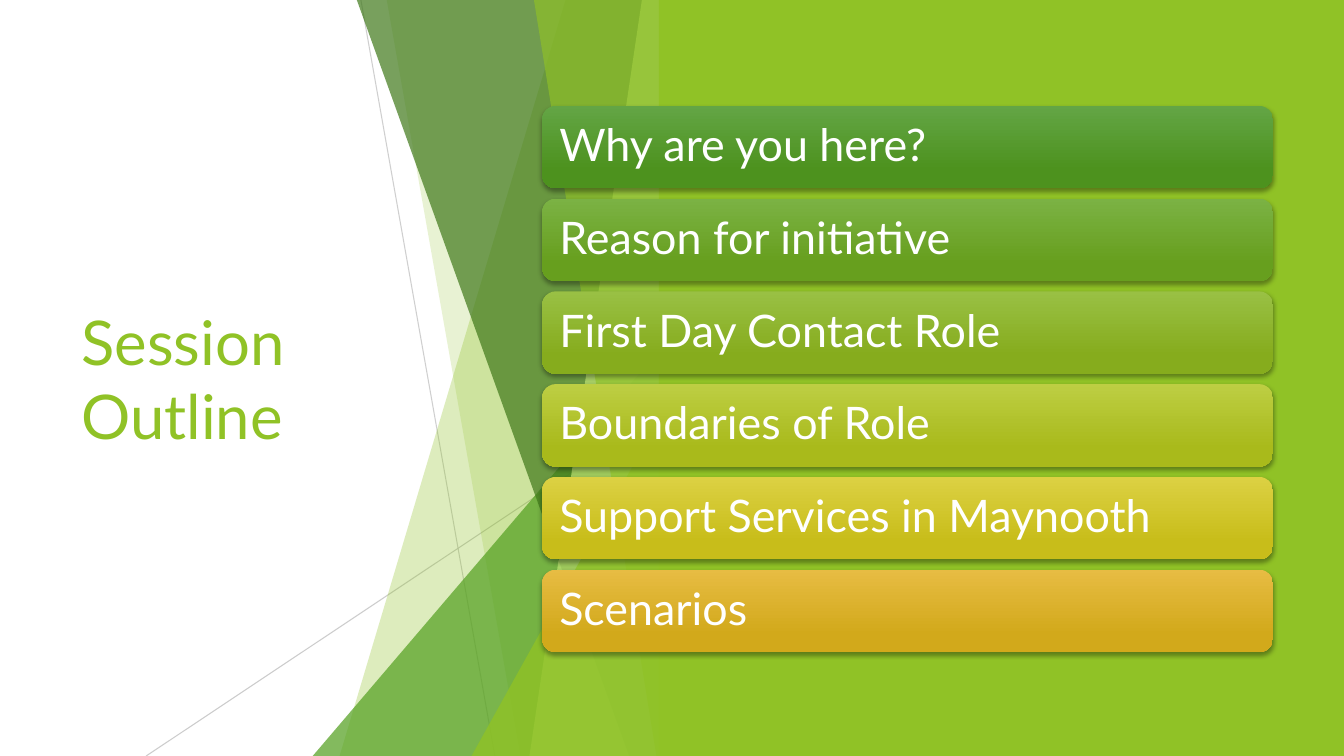
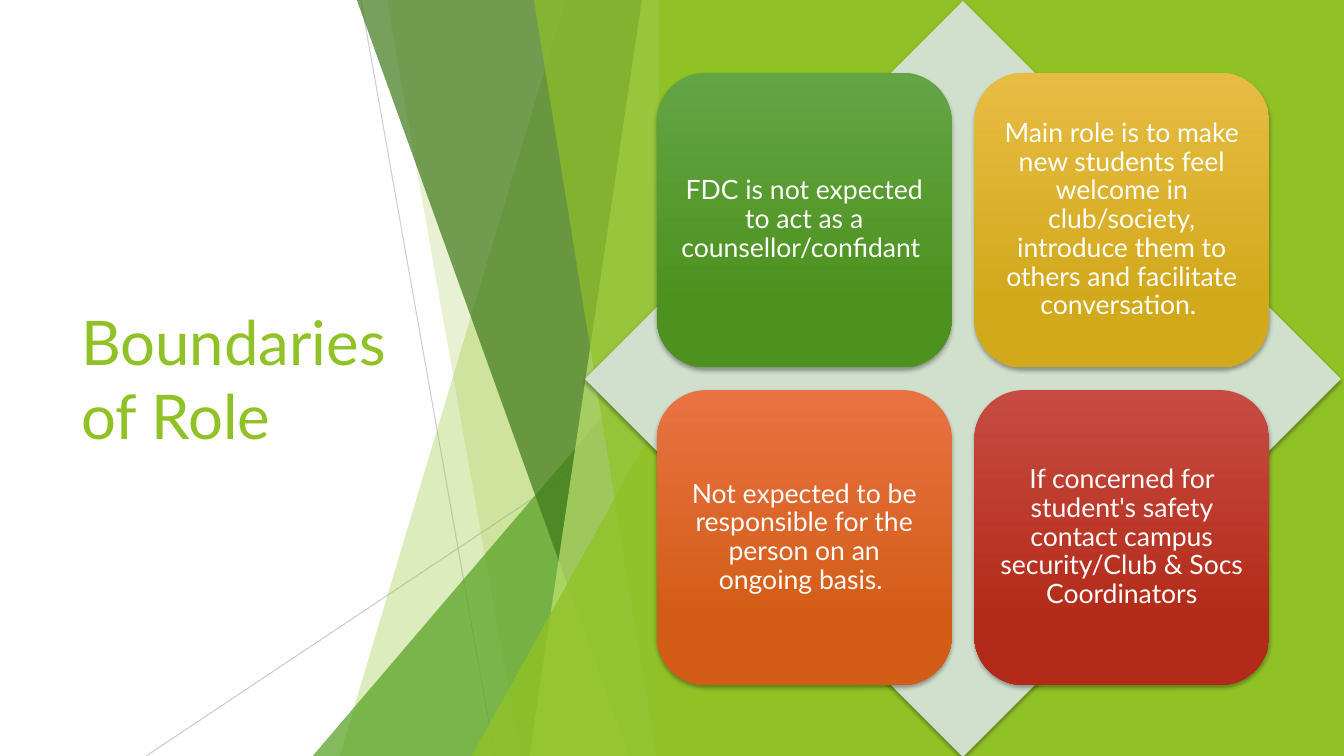
from pptx import Presentation
from pptx.dml.color import RGBColor
from pptx.enum import shapes, text
from pptx.oxml import parse_xml
from pptx.oxml import ns
from pptx.util import Pt

LIME, WHITE, GREY = "90C226", "FFFFFF", "BFBFBF"
KIND = shapes.MSO_SHAPE
SHADOW = (f'<a:outerShdw {ns.nsdecls("a")} blurRad="38100" dist="25400" dir="5400000" rotWithShape="0">'
          '<a:srgbClr val="000000"><a:alpha val="35000"/></a:srgbClr></a:outerShdw>')


def paint(fill, *cols, alpha=100):
    """One colour gives a solid fill, two give a gradient from top to bottom."""
    if len(cols) == 2:
        fill.gradient()
        fill.gradient_angle = 270
        for stop, col, pos in zip(fill.gradient_stops, cols, (0, 0.78)):
            stop.color.rgb = RGBColor.from_string(col)
            stop.position = pos
        return
    fill.solid()
    fill.fore_color.rgb = RGBColor.from_string(cols[0])
    if alpha < 100:
        node = fill._xPr.find(".//" + ns.qn("a:srgbClr"))
        node.append(parse_xml(f'<a:alpha {ns.nsdecls("a")} val="{alpha * 1000}"/>'))


def write(shape, words, size=19, col=WHITE, align="LEFT", pad=7.2, lead=1.0):
    frame = shape.text_frame
    frame.word_wrap = True
    frame.vertical_anchor = text.MSO_ANCHOR.MIDDLE
    frame.margin_left = frame.margin_right = Pt(pad)
    frame.margin_top = frame.margin_bottom = Pt(min(pad, 9))
    para = frame.paragraphs[0]
    para.alignment = getattr(text.PP_ALIGN, align)
    para.line_spacing = lead
    run = para.add_run()
    run.text = words
    run.font.name, run.font.size = "Lato", Pt(size)
    paint(run.font.fill, col)


# Backdrop: thin lines (x1, y1, x2, y2, alpha)
LINES = [(257.8, 0, 353.5, 540, 75), (479.5, 290.2, 104.4, 540, 80)]
# Facets end at EDGE: (top x, foot x, top y, colour, alpha); a top y marks a triangle
EDGE = 479.7
FACETS = [
    (404, 242.6, 0, LIME, 30),
    (276.3, 371.7, 0, LIME, 20),
    (EDGE, 223.4, 239.8, "54A021", 72),
    (254.9, 449.4, 0, "3F7819", 70),
    (458.5, 378.2, 0, "C0E474", 70),
    (381.4, 468.9, 0, LIME, 65),
    (EDGE, 336.8, 283, LIME, 80),
]

GREEN, GOLD = ("63A545", "4D921E"), ("E7BC43", "D2A91B")

# Outline bars: one column
topics = [
    ("Why are you here?", GREEN),
    ("Reason for initiative", ("7BB244", "679F1E")),
    ("First Day Contact Role", ("99C044", "86AC1D")),
    ("Boundaries of Role", ("BDCE43", "A9BA1B")),
    ("Support Services in Maynooth", ("DCD143", "C8BD1A")),
    ("Scenarios", GOLD),
]
bars = [(KIND.ROUNDED_RECTANGLE, 387.2, 75.6 + 66.25 * i, 522, 59, cols, words)
        for i, (words, cols) in enumerate(topics)]

# Boundary cards: two by two over a diamond
limits = [
    ("FDC is not expected to act as a counsellor/confidant ", GREEN),
    ("Main role is to make new students feel welcome in club/society, "
     "introduce them to others and facilitate conversation. ", GOLD),
    ("Not expected to be responsible for the person on an ongoing basis. ",
     ("E87242", "D35D16")),
    ("If concerned for student's safety contact campus security/Club & Socs Coordinators",
     ("C74B42", "B32B18")),
]
cards = [(KIND.DIAMOND, 417.8, 0.7, 540, 540, ("D1DFCD",), "")]
cards += [(KIND.ROUNDED_RECTANGLE, 469.2 + 226.8 * (i % 2), 51.9 + 226.8 * (i // 2),
           210.6, 210.6, cols, words) for i, (words, cols) in enumerate(limits)]

PAGES = [
    ("Session Outline", bars, dict(size=32, pad=9.4, lead=0.9)),
    ("Boundaries of Role", cards, dict(size=19, pad=5.8, lead=0.9, align="CENTER")),
]

deck = Presentation()
deck.slide_width, deck.slide_height = Pt(960), Pt(540)

for title, items, style in PAGES:
    slide = deck.slides.add_slide(deck.slide_layouts[6])
    paint(slide.background.fill, WHITE)
    pool = slide.shapes

    # Title
    box = pool.add_textbox(Pt(51), Pt(108.7), Pt(279.4), Pt(322.6))
    write(box, title, size=44, col=LIME)

    # Thin lines
    for x1, y1, x2, y2, alpha in LINES:
        line = pool.add_connector(shapes.MSO_CONNECTOR.STRAIGHT, Pt(x1), Pt(y1), Pt(x2), Pt(y2))
        line.line.width = Pt(0.75)
        paint(line.line.fill, GREY, alpha=alpha)
        line._element.spPr.append(parse_xml(f'<a:effectLst {ns.nsdecls("a")}/>'))

    # Facets
    for head, foot, top, col, alpha in FACETS:
        if top:
            facet = pool.add_shape(KIND.ISOSCELES_TRIANGLE, Pt(foot), Pt(top),
                                   Pt(EDGE - foot), Pt(540 - top))
            facet.adjustments[0] = 1
        else:
            pen = pool.build_freeform(Pt(head), 0)
            pen.add_line_segments([(Pt(EDGE), 0), (Pt(EDGE), Pt(540)), (Pt(foot), Pt(540))])
            facet = pen.convert_to_shape()
        paint(facet.fill, col, alpha=alpha)
        facet.line.fill.background()
        facet.shadow.inherit = False

    # Right panel
    panel = pool.add_shape(KIND.RECTANGLE, Pt(470.6), 0, Pt(489.4), Pt(540))
    paint(panel.fill, LIME)
    panel.line.fill.background()
    panel.shadow.inherit = False

    # Bars or cards
    for kind, x, y, w, h, cols, words in items:
        item = pool.add_shape(kind, Pt(x), Pt(y), Pt(w), Pt(h))
        paint(item.fill, *cols)
        item.line.fill.background()
        item.shadow.inherit = False
        item._element.spPr.find(ns.qn("a:effectLst")).append(parse_xml(SHADOW))
        if words:
            write(item, words, **style)

deck.save("out.pptx")
